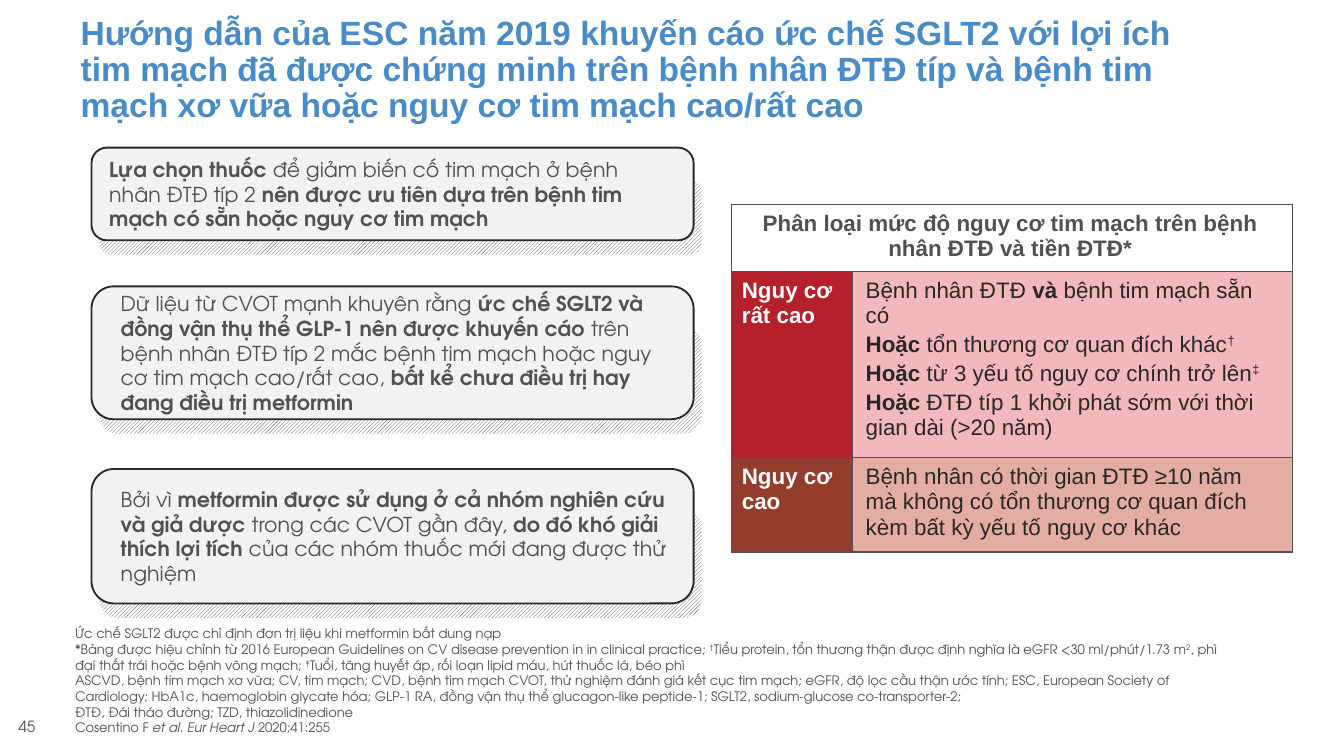
import pptx
import pptx.dml.color
import pptx.enum.dml
import pptx.enum.shapes
import pptx.enum.text
import pptx.oxml
import pptx.oxml.ns
import pptx.util
from pptx.util import Cm, Pt

ANCHOR = pptx.enum.text.MSO_ANCHOR
ALIGN = pptx.enum.text.PP_ALIGN
ROUNDED = pptx.enum.shapes.MSO_SHAPE.ROUNDED_RECTANGLE
GREY, DARK, WHITE = "515151", "282828", "FFFFFF"
BODY_FONT = "TeX Gyre Adventor"

TITLE = ("Hướng dẫn của ESC năm 2019 khuyến cáo ức chế SGLT2 với lợi ích tim mạch đã được "
         "chứng minh trên bệnh nhân ĐTĐ típ và bệnh tim mạch xơ vữa hoặc nguy cơ tim mạch cao/rất cao")

CARDS = [
    (2.79, 1.75, {}, [
        ("Lựa chọn thuốc ", "b"),
        ("để giảm biến cố tim mạch ở bệnh nhân ĐTĐ típ 2 ", ""),
        ("nên được ưu tiên dựa trên bệnh tim mạch có sẵn hoặc nguy cơ tim mạch", "b")]),
    (5.41, 2.51, {"space_after": Pt(6)}, [
        ("Dữ liệu từ CVOT mạnh khuyên rằng ", ""),
        ("ức chế SGLT2 và đồng vận thụ thể GLP-1 nên được khuyến cáo ", "b"),
        ("trên bệnh nhân ĐTĐ típ 2 mắc bệnh tim mạch hoặc nguy cơ tim mạch cao/rất cao, ", ""),
        ("bất kể chưa điều trị hay đang điều trị metformin", "b")]),
    (8.86, 2.54, {"space_after": Pt(6)}, [
        ("Bởi vì ", ""),
        ("metformin được sử dụng ở cả nhóm nghiên cứu và giả dược ", "b"),
        ("trong các CVOT gần đây, ", ""),
        ("do đó khó giải thích lợi tích ", "b"),
        ("của các nhóm thuốc mới đang được thử nghiệm", "")]),
]

FOOTNOTES = [
    [("Ức chế SGLT2 được chỉ định đơn trị liệu khi metformin bất dung nạp", "")],
    [("*Bảng được hiệu chỉnh từ 2016 European Guidelines on CV disease prevention in in "
      "clinical practice; ", ""),
     ("†", "^"),
     ("Tiểu protein, tổn thương thận được định nghĩa là eGFR <30 ml/phút/1.73 m", ""),
     ("2", "^"),
     (", phì đại thất trái hoặc bệnh võng mạch; ", ""),
     ("‡", "^"),
     ("Tuổi, tăng huyết áp, rối loạn lipid máu, hút thuốc lá, béo phì", "")],
    [("ASCVD, bệnh tim mạch xơ vữa; CV, tim mạch; CVD, bệnh tim mạch CVOT, thử nghiệm đánh giá "
      "kết cục tim mạch; eGFR, độ lọc cầu thận ước tính; ESC, European Society of Cardiology; "
      "HbA1c, haemoglobin glycate hóa; GLP-1 RA, đồng vận thụ thể glucagon-like peptide-1; "
      "SGLT2, sodium-glucose co-transporter-2;\n"
      "ĐTĐ, Đái tháo đường; TZD, thiazolidinedione\nCosentino F ", ""),
     ("et al. Eur Heart J ", "i"),
     ("2020;41:255", "")],
]

TABLE_TITLE = [[("Phân loại mức độ nguy cơ tim mạch trên bệnh nhân ĐTĐ và tiền ĐTĐ*", "b")]]
RISK_LEVELS = [
    ("Nguy cơ rất cao", "B6202B", "F2B8BC", [
        [("Bệnh nhân ĐTĐ ", ""), ("và ", "b"), ("bệnh tim mạch sẵn có", "")],
        [("Hoặc", "b"), (" tổn thương cơ quan đích khác", ""), ("†", "^")],
        [("Hoặc", "b"), (" từ 3 yếu tố nguy cơ chính trở lên", ""), ("‡", "^")],
        [("Hoặc", "b"), (" ĐTĐ típ 1 khởi phát sớm với thời gian dài (>20 năm)", "")]]),
    ("Nguy cơ cao", "953C2C", "E4ADA4", [
        [("Bệnh nhân có thời gian ĐTĐ ≥10 năm mà không có tổn thương cơ quan đích kèm bất kỳ "
          "yếu tố nguy cơ khác", "")]]),
]


def rgb(value):
    """Return the colour for a hex string."""
    return pptx.dml.color.RGBColor.from_string(value)


def apply_format(target, values):
    """Set each attribute named in values on the target."""
    for name, value in values.items():
        setattr(target, name, value)


def add_run(paragraph, text, style, size, color, font_name):
    """Add one run; style holds b for bold, i for italic, ^ for superscript."""
    run = paragraph.add_run()
    run.text = text
    apply_format(run.font, {"size": Pt(size), "name": font_name,
                            "bold": "b" in style, "italic": "i" in style})
    run.font.color.rgb = rgb(color)
    if "^" in style:
        run._r.get_or_add_rPr().set("baseline", "30000")


def write_text(frame, paragraphs, size, color, font_name, layout=None, gap=0):
    """Fill a text frame with paragraphs made of styled runs."""
    for index, runs in enumerate(paragraphs):
        paragraph = frame.add_paragraph() if index else frame.paragraphs[0]
        apply_format(paragraph, {"alignment": ALIGN.LEFT, **(layout or {})})
        if index and gap:
            paragraph.space_before = Pt(gap)
        for text, style in runs:
            for number, line in enumerate(text.split("\n")):
                if number:
                    paragraph.add_line_break()
                add_run(paragraph, line, style, size, color, font_name)


def add_title(slide):
    """Place and write the slide title."""
    title = slide.shapes.title
    apply_format(title, {"left": Cm(1.27), "top": Cm(0.36), "width": Cm(22.23), "height": Cm(2.13)})
    apply_format(title.text_frame, {"vertical_anchor": ANCHOR.BOTTOM, "word_wrap": True,
                                    "auto_size": pptx.enum.text.MSO_AUTO_SIZE.NONE})
    write_text(title.text_frame, [[(TITLE, "b")]], 18, "498BC9", "Arial", {"line_spacing": 0.9})


def add_text_box(slide, box, paragraphs, size, margins):
    """Add a bottom-anchored text box."""
    frame = slide.shapes.add_textbox(*map(Cm, box)).text_frame
    apply_format(frame, {"word_wrap": True, "vertical_anchor": ANCHOR.BOTTOM, **margins})
    write_text(frame, paragraphs, size, GREY, BODY_FONT)


def add_rounded_box(group, left, top, height):
    """Add a rounded box of the common card width."""
    shape = group.shapes.add_shape(ROUNDED, Cm(left), Cm(top), Cm(11.38), Cm(height))
    shape.shadow.inherit = False
    return shape


def add_card(slide, top, height, layout, runs):
    """Add a text card above its hatched backing."""
    group = slide.shapes.add_group_shape()
    backing_height = 0.81 * height
    backing = add_rounded_box(group, 1.88, top + height + 0.27 - backing_height, backing_height)
    backing.fill.patterned()
    backing.fill.pattern = pptx.enum.dml.MSO_PATTERN.DARK_UPWARD_DIAGONAL
    backing.fill.fore_color.rgb = rgb(GREY)
    backing.fill.back_color.rgb = rgb(WHITE)
    backing.line.fill.background()

    card = add_rounded_box(group, 1.73, top, height)
    card.fill.solid()
    card.fill.fore_color.rgb = rgb("F2F2F2")
    card.line.color.rgb = rgb(DARK)
    card.line.width = Pt(1)
    apply_format(card.text_frame, {"word_wrap": True, "vertical_anchor": ANCHOR.MIDDLE})
    write_text(card.text_frame, [runs], 11, GREY, BODY_FONT, layout)
    if layout:
        card.text_frame.paragraphs[0]._p.get_or_add_pPr().set("marL", str(Cm(0.18)))


def style_cell(cell, fill, margin_left):
    """Give a cell its fill, left margin and thin border."""
    cell.margin_left = Cm(margin_left)
    properties = cell._tc.get_or_add_tcPr()
    for side in ("lnL", "lnR", "lnT", "lnB"):
        properties.append(pptx.oxml.parse_xml(
            f'<a:{side} {pptx.oxml.ns.nsdecls("a")} w="{Pt(0.75)}"><a:solidFill>'
            f'<a:srgbClr val="{GREY}"/></a:solidFill></a:{side}>'))
    cell.fill.solid()
    cell.fill.fore_color.rgb = rgb(fill)


def add_risk_table(slide):
    """Add the table of cardiovascular risk levels."""
    table = slide.shapes.add_table(3, 2, Cm(13.82), Cm(3.86), Cm(10.6), Cm(6.2)).table
    apply_format(table, {"first_row": False, "horz_banding": False})
    for column, width in zip(table.columns, (2.29, 8.31)):
        column.width = Cm(width)
    for row, height in zip(table.rows, (1.2, 3.32, 1.68)):
        row.height = Cm(height)
    for column in range(2):
        style_cell(table.cell(0, column), WHITE, 0.2)
    table.cell(0, 0).merge(table.cell(0, 1))
    write_text(table.cell(0, 0).text_frame, TABLE_TITLE, 12, GREY, "Arial",
               {"alignment": ALIGN.CENTER})
    for row, (level, level_fill, criteria_fill, criteria) in enumerate(RISK_LEVELS, 1):
        level_cell, criteria_cell = table.cell(row, 0), table.cell(row, 1)
        style_cell(level_cell, level_fill, 0.2)
        write_text(level_cell.text_frame, [[(level, "b")]], 12, WHITE, "Arial")
        style_cell(criteria_cell, criteria_fill, 0.25)
        write_text(criteria_cell.text_frame, criteria, 12, DARK, "Arial", gap=2)


def main():
    """Build and save the slide."""
    presentation = pptx.Presentation()
    apply_format(presentation, {"slide_width": Cm(25.4), "slide_height": Cm(14.28)})
    slide = presentation.slides.add_slide(presentation.slide_layouts[5])
    add_title(slide)
    add_text_box(slide, (1.17, 13.26, 22.33, 0.76), FOOTNOTES, 7, {})
    for card in CARDS:
        add_card(slide, *card)
    add_risk_table(slide)
    add_text_box(slide, (0.1, 13.44, 0.86, 0.58), [[("45", "")]], 8.2, {"margin_right": 0})
    presentation.save("out.pptx")


if __name__ == "__main__":
    main()
